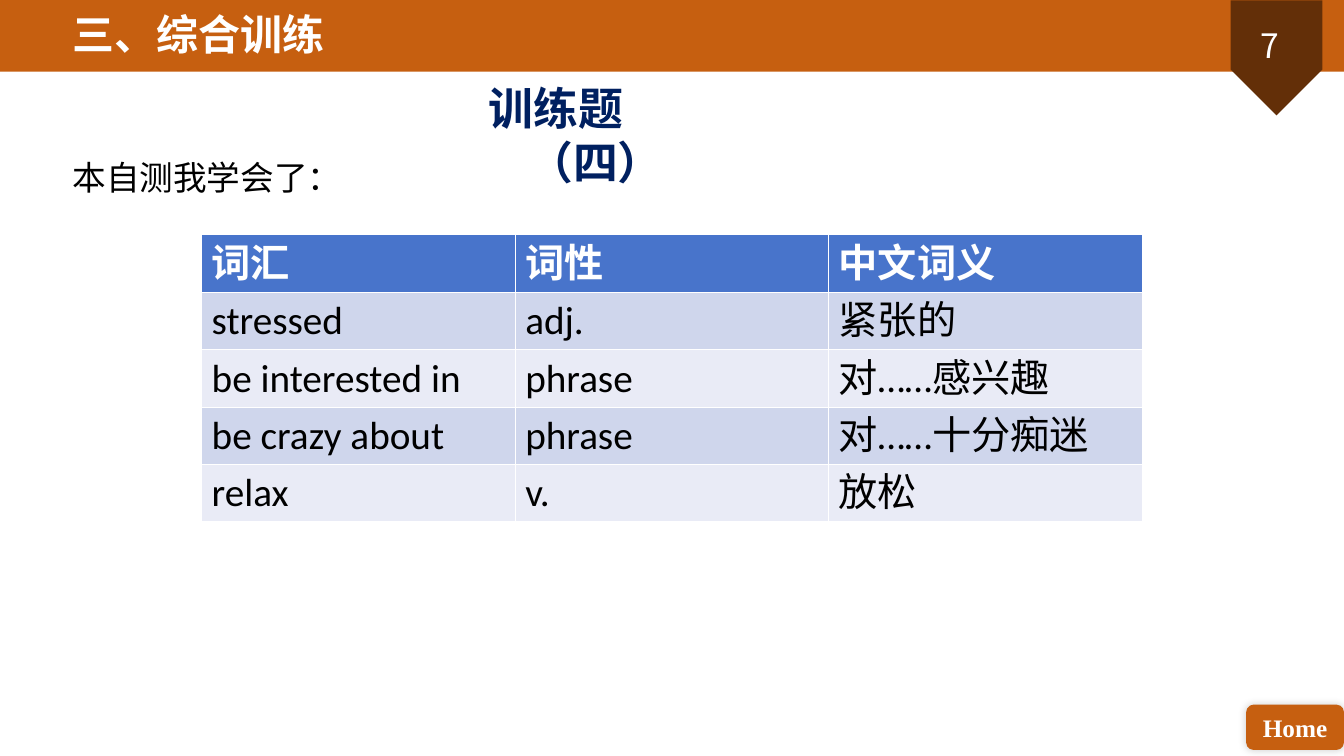
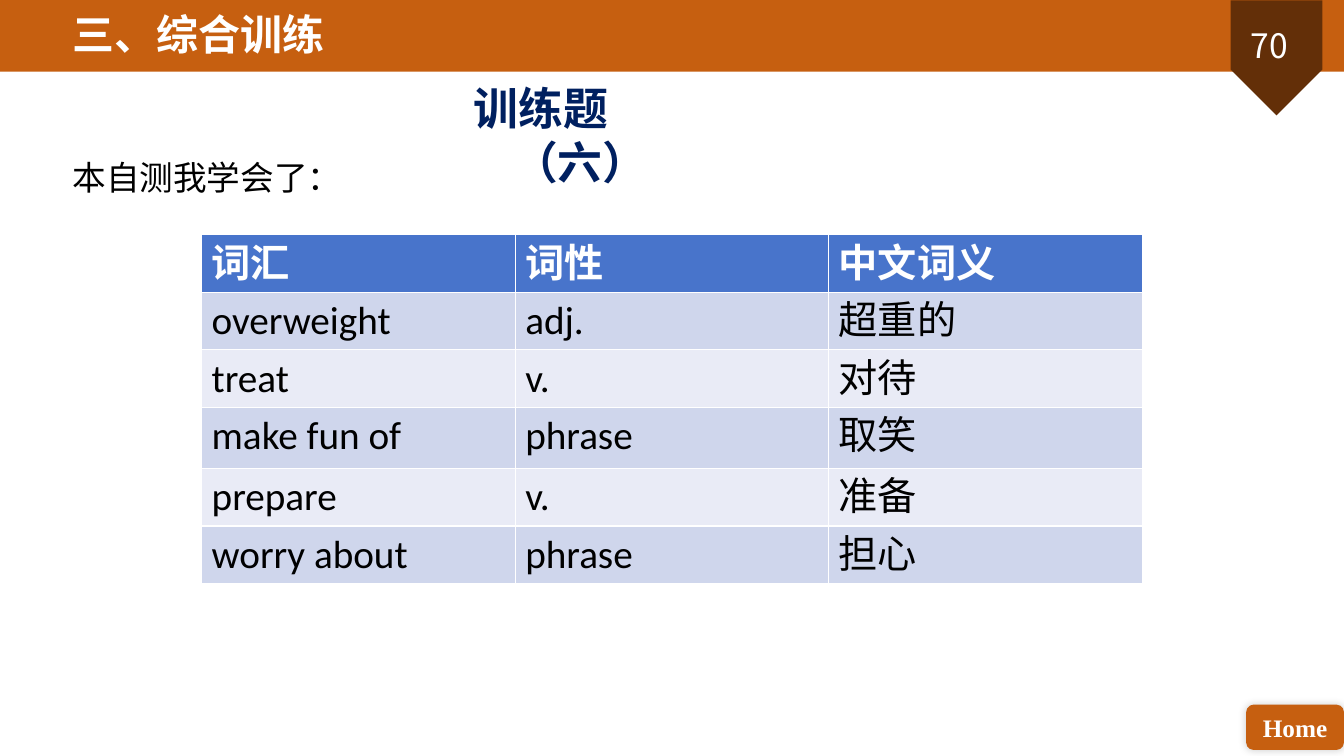
from dataclasses import dataclass
from lxml.etree import SubElement
from pptx import Presentation
from pptx.dml.color import RGBColor
from pptx.enum.shapes import MSO_SHAPE as Shape
from pptx.enum.text import MSO_ANCHOR as Anchor, MSO_AUTO_SIZE as Fit, PP_ALIGN as Align
from pptx.oxml.ns import qn
from pptx.util import Inches, Pt

TITLE = "三、综合训练"
LEAD = "本自测我学会了："
HOME = "Home"
HEAD = ("词汇", "词性", "中文词义")
PAGES = [
    {
        "num": "7", "name": "训练题（四）", "left": 4.75, "tall": {},
        "words": [
            ("stressed", "adj.", "紧张的"),
            ("be interested in", "phrase", "对……感兴趣"),
            ("be crazy about", "phrase", "对……十分痴迷"),
            ("relax", "v.", "放松"),
        ],
    },
    {
        "num": "70", "name": "训练题（六）", "left": 4.6, "tall": {3: 0.61},
        "words": [
            ("overweight", "adj.", "超重的"),
            ("treat", "v.", "对待"),
            ("make fun of", "phrase", "取笑"),
            ("prepare", "v.", "准备"),
            ("worry about", "phrase", "担心"),
        ],
    },
]


@dataclass(frozen=True)
class Theme:
    band: str = "C65F10"
    flag: str = "632F08"
    navy: str = "002060"
    white: str = "FFFFFF"
    black: str = "000000"
    head: str = "4874CB"
    rows: tuple = ("CFD6EC", "E9EBF6")
    latin: str = "Calibri"
    hans: str = "Noto Sans CJK SC"
    serif: str = "Times New Roman"
    title: int = 30
    name: int = 32
    lead: int = 24
    cell: int = 28
    home: int = 18


T = Theme()
WIDE, HIGH = 13.33, 7.5
COL, ROW = 3.11, 0.57


def box(*dims):
    return [Inches(n) for n in dims]


def write(frame, text, face, size, color, bold=False, **form):
    frame.word_wrap = True
    para = frame.paragraphs[0]
    for key, val in form.items():
        setattr(para, key, val)
    run = para.add_run()
    run.text = text
    for key, val in {"name": face, "size": Pt(size), "bold": bold}.items():
        setattr(run.font, key, val)
    run.font.color.rgb = RGBColor.from_string(color)
    SubElement(run.font._element, qn("a:ea"), typeface=face)
    return para


def label(slide, dims, *args, **form):
    frame = slide.shapes.add_textbox(*box(*dims)).text_frame
    para = write(frame, *args, **form)
    frame.auto_size = Fit.SHAPE_TO_FIT_TEXT
    return para


def block(slide, kind, dims, color, turn=0):
    shape = slide.shapes.add_shape(kind, *box(*dims))
    shape.shadow.inherit = False
    shape.fill.solid()
    shape.fill.fore_color.rgb = RGBColor.from_string(color)
    shape.line.fill.background()
    shape.rotation = turn
    return shape


def glow(shape):
    fx = shape._element.spPr.find(qn("a:effectLst"))
    cast = SubElement(fx, qn("a:outerShdw"), blurRad=str(Pt(6)), dist="0",
                      dir=str(315 * 60000), algn="ctr", rotWithShape="0")
    tint = SubElement(cast, qn("a:srgbClr"), val=T.black)
    SubElement(tint, qn("a:alpha"), val="20000")


def frame(slide, num):
    block(slide, Shape.RECTANGLE, (0, 0, WIDE, 0.71), T.band)
    block(slide, Shape.PENTAGON, (12.09, 0.12, 1.14, 0.91), T.flag, 90)
    label(slide, (12.1, 0.2, 0.98, 0.5), num, T.hans, T.lead, T.white,
          alignment=Align.CENTER)
    home = block(slide, Shape.ROUNDED_RECTANGLE, (12.36, 6.99, 0.97, 0.45), T.band)
    glow(home)
    home.text_frame.vertical_anchor = Anchor.MIDDLE
    write(home.text_frame, HOME, T.serif, T.home, T.white, True, alignment=Align.CENTER)

    title = slide.shapes.title
    slide.shapes._spTree.append(title._element)
    for key, val in zip(("left", "top", "width", "height"), box(0.62, 0.03, 3.14, 0.6)):
        setattr(title, key, val)
    title.text_frame.vertical_anchor = Anchor.TOP
    write(title.text_frame, TITLE, T.latin, T.title, T.white, True, alignment=Align.JUSTIFY)
    title.text_frame.auto_size = Fit.SHAPE_TO_FIT_TEXT


def grid(slide, words, tall):
    data = [HEAD, *words]
    highs = [tall.get(i, ROW) for i in range(len(data))]
    dims = box(2, 2.33, COL * len(HEAD), sum(highs))
    table = slide.shapes.add_table(len(data), len(HEAD), *dims).table
    for col in table.columns:
        col.width = Inches(COL)
    for i, (row, texts) in enumerate(zip(table.rows, data)):
        row.height = Inches(highs[i])
        top = i == 0
        fill = T.head if top else T.rows[(i - 1) % 2]
        for cell, text in zip(row.cells, texts):
            cell.fill.solid()
            cell.fill.fore_color.rgb = RGBColor.from_string(fill)
            write(cell.text_frame, text, T.latin, T.cell, T.white if top else T.black, top)


def main():
    deck = Presentation()
    deck.slide_width, deck.slide_height = box(WIDE, HIGH)
    for page in PAGES:
        slide = deck.slides.add_slide(deck.slide_layouts[5])
        frame(slide, page["num"])
        para = label(slide, (page["left"], 0.75, 2.61, 0.64), page["name"],
                     T.hans, T.name, T.navy, True)
        props = para._p.get_or_add_pPr()
        for key, val in {"marL": 0.39, "indent": -0.5}.items():
            props.set(key, str(Inches(val)))
        label(slide, (0.62, 1.39, 10.88, 1.15), LEAD, T.hans, T.lead, T.black,
              line_spacing=1.3)
        grid(slide, page["words"], page["tall"])
    deck.save("out.pptx")


if __name__ == "__main__":
    main()
